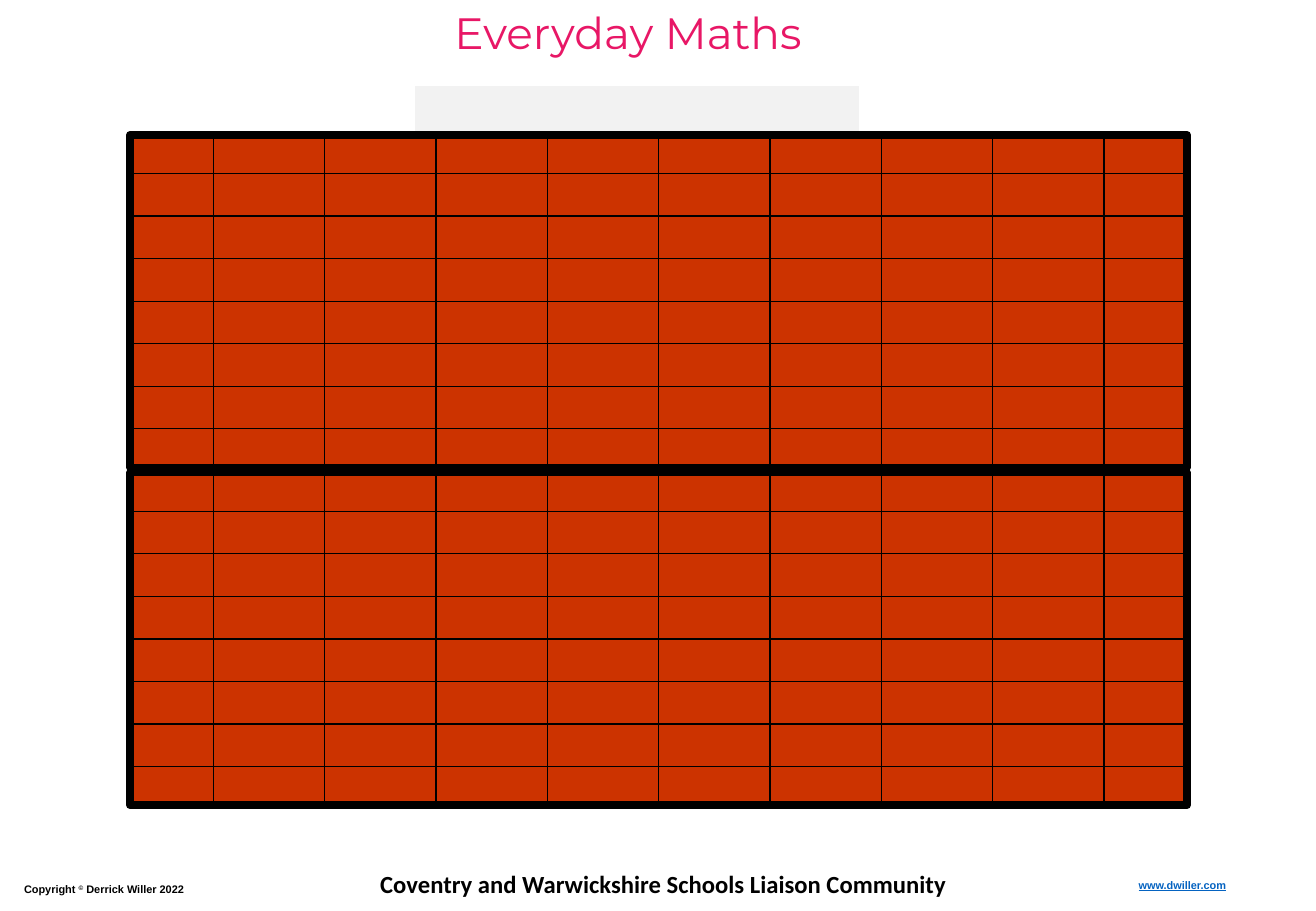
from lxml import etree
from pptx import Presentation
from pptx.dml.color import RGBColor
from pptx.enum.shapes import MSO_CONNECTOR, MSO_SHAPE
from pptx.enum.text import PP_ALIGN
from pptx.oxml.ns import qn
from pptx.util import Inches, Pt

RECT = MSO_SHAPE.RECTANGLE
STRAIGHT = MSO_CONNECTOR.STRAIGHT
LEFT, CENTER, RIGHT = PP_ALIGN.LEFT, PP_ALIGN.CENTER, PP_ALIGN.RIGHT
BLANK = 6
BLACK, WHITE, GREY = "000000", "FFFFFF", "F2F2F2"
TILE, PINK, BLUE = "CC3300", "E81766", "0563C1"


def color(code):
    return RGBColor.from_string(code)


class Board:
    """Draws on one slide; all lengths are percent of the slide's size."""

    def __init__(self, deck):
        self.wide, self.high = deck.slide_width, deck.slide_height
        self.shapes = deck.slides.add_slide(deck.slide_layouts[BLANK]).shapes

    def scale(self, x, y, *rest):
        """Turn x, y pairs of percent into slide units."""
        pair = round(self.wide * x / 100), round(self.high * y / 100)
        return pair + self.scale(*rest) if rest else pair

    def text(self, box, parts, size, face, ink=BLACK, align=LEFT, bold=True):
        """Add one line of text and return its runs."""
        frame = self.shapes.add_textbox(*self.scale(*box)).text_frame
        frame.word_wrap = True
        para = frame.paragraphs[0]
        para.alignment = align
        font = para.font
        font.size, font.name, font.bold = Pt(size), face, bold
        font.color.rgb = color(ink)
        for part in parts:
            para.add_run().text = part
        return para.runs

    def rect(self, box, fill, edge, width):
        shape = self.shapes.add_shape(RECT, *self.scale(*box))
        shape.shadow.inherit = False
        shape.fill.solid()
        shape.fill.fore_color.rgb = color(fill)
        shape.line.color.rgb = color(edge)
        shape.line.width = Pt(width)

    def line(self, *ends):
        line = self.shapes.add_connector(STRAIGHT, *self.scale(*ends))
        line.line.color.rgb = color(BLACK)
        line.line.width = Pt(0.75)
        etree.SubElement(line._element.spPr, qn("a:effectLst"))

    def panel(self, x, y, wide, high, rows=7, cols=9, row=4.67, col=8.46):
        """Add a tiled roof panel whose ruled lines are centred on it."""
        self.rect((x, y, wide, high), TILE, BLACK, 4.5)
        for i in range(rows):
            level = y + high / 2 + (i - (rows - 1) / 2) * row
            self.line(x, level, x + wide, level)
        for i in range(cols):
            post = x + wide / 2 + (i - (cols - 1) / 2) * col
            self.line(post, y, post, y + high)


def main():
    deck = Presentation()
    deck.slide_width, deck.slide_height = Inches(10.83), Inches(7.5)
    board = Board(deck)

    board.text((27.98, 94.67, 45.34, 4.67),
               ["Coventry and Warwickshire Schools Liaison Community"],
               14.6, "Calibri")
    notice = board.text((0.92, 96.27, 42.38, 2.8),
                        ["Copyright ", "©", " Derrick Willer 2022"],
                        6.5, "Arial")
    notice[1].font._element.set("baseline", "30000")
    site = board.text((84.03, 95.73, 10.06, 2.8), ["www.dwiller.com"],
                      6.5, "Arial", BLUE, RIGHT)
    site[0].font.underline = True
    board.text((27.42, 0, 40.63, 7.2), ["Everyday Maths"],
               26, "Montserrat", PINK, CENTER, False)

    board.rect((31.49, 9.33, 33.8, 7.2), GREY, WHITE, 0.75)
    for top in (14.8, 51.87):
        board.panel(9.88, top, 80.33, 36.53)

    deck.save("out.pptx")


if __name__ == "__main__":
    main()
